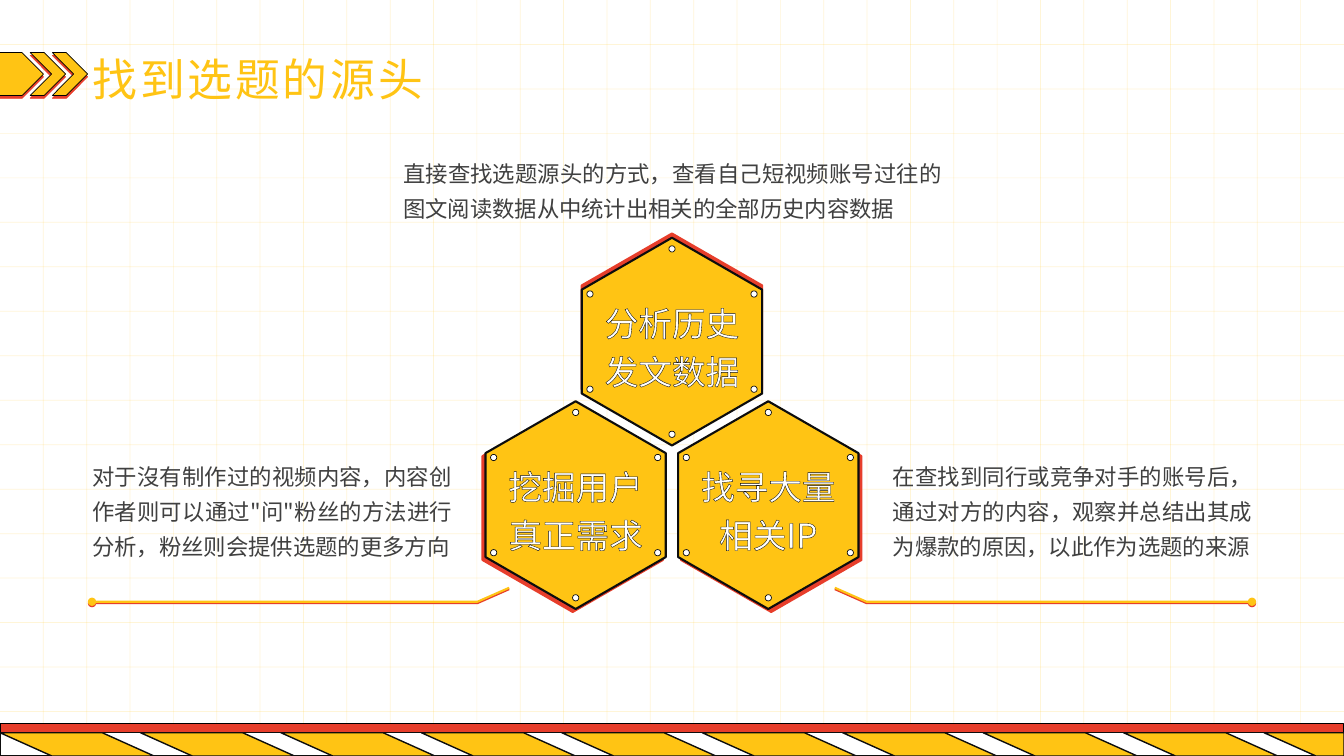
from dataclasses import dataclass
from typing import Any

from lxml import etree
from pptx import Presentation
from pptx import util as u
from pptx.dml.color import RGBColor
from pptx.enum import shapes, text
from pptx.oxml import ns

Pt = u.Pt
Point = tuple[float, float]
GOLD, RED, INK, WHITE, GREY = "FFC414", "E73E2B", "0D0D0D", "FFFFFF", "404040"
WIDE, HIGH = 960, 540
ALIGN = text.PP_ALIGN


@dataclass
class Style:
    fill: str | None
    line: str
    width: float
    drop: float = 0
    angle: int = 90


@dataclass
class Cell:
    x: float
    y: float
    angle: int
    lines: list[str]
    side: int = 0


@dataclass
class Note:
    x: float
    y: float
    width: float
    height: float
    words: str


def hue(code: str) -> RGBColor:
    return RGBColor.from_string(code)


def put(item: Any, values: dict[str, Any]) -> None:
    for name, value in values.items():
        setattr(item, name, value)


def add_tag(parent: Any, name: str, **values: Any) -> Any:
    node = etree.SubElement(parent, ns.qn(name))
    for key, value in values.items():
        node.set(key, str(value))
    return node


def paint(shape: Any, style: Style) -> None:
    if style.fill:
        shape.fill.solid()
        shape.fill.fore_color.rgb = hue(style.fill)
    else:
        shape.fill.background()
    shape.line.color.rgb = hue(style.line)
    shape.line.width = Pt(style.width)
    shape.shadow.inherit = False
    if style.drop:
        effects = shape.element.find(".//" + ns.qn("a:effectLst"))
        shade = add_tag(effects, "a:outerShdw", blurRad=0, dist=Pt(style.drop),
                        dir=style.angle * 60000, algn="ctr", rotWithShape=0)
        add_tag(shade, "a:srgbClr", val=RED)


def trace(pool: Any, loops: list[list[Point]], style: Style, close: bool = True) -> Any:
    paths = [[(Pt(x), Pt(y)) for x, y in loop] for loop in loops]
    pen = pool.build_freeform(*paths[0][0], scale=1.0)
    for path in paths:
        if path is not paths[0]:
            pen.move_to(*path[0])
        pen.add_line_segments(path[1:], close=close)
    shape = pen.convert_to_shape()
    paint(shape, style)
    return shape


def stamp(pool: Any, kind: Any, box: tuple[float, ...], style: Style) -> None:
    paint(pool.add_shape(kind, *map(Pt, box)), style)


def rule(pool: Any, start: Point, end: Point) -> None:
    line = pool.add_connector(shapes.MSO_CONNECTOR.STRAIGHT, *map(Pt, start + end))
    line.line.color.rgb = hue(GOLD)
    line.line.width = Pt(0.5)
    add_tag(line.element.find(".//" + ns.qn("a:srgbClr")), "a:alpha", val=17000)
    add_tag(line.element.spPr, "a:effectLst")


def write(shape: Any, lines: list[str], look: dict[str, Any], form: dict[str, Any],
          color: str, wrap: bool = True, edge: bool = False, space: int = 0) -> None:
    frame = shape.text_frame
    put(frame, {"margin_left": 0, "margin_right": 0, "margin_top": 0, "margin_bottom": 0,
                "word_wrap": wrap, "auto_size": text.MSO_AUTO_SIZE.NONE,
                "vertical_anchor": text.MSO_ANCHOR.TOP})
    frame.text = "\n".join(lines)
    for para in frame.paragraphs:
        put(para, form | {"space_before": Pt(0)})
        for run in para.runs:
            put(run.font, look)
            run.font.color.rgb = hue(color)
    for props in shape.element.iter(ns.qn("a:rPr")):
        add_tag(props, "a:ea", typeface=look["name"])
        if space:
            props.set("spc", str(space))
        if edge:
            line = add_tag(props, "a:ln", w=Pt(0.5))
            add_tag(add_tag(line, "a:solidFill"), "a:srgbClr", val=INK)
            props.insert(0, line)


def draw_grid(pool: Any) -> None:
    rows, cols = 17, 31
    grid = pool.add_group_shape().shapes
    for row in range(1, rows):
        y = HIGH * row / rows
        rule(grid, (0, y), (WIDE, y))
    for col in range(1, cols):
        x = WIDE * col / cols
        rule(grid, (x, 0), (x, HIGH))


def draw_frame(pool: Any) -> None:
    rect = shapes.MSO_SHAPE.RECTANGLE
    top, mid, low = 37.6, 52.9, 68.2
    badge = Style(GOLD, "000000", 0.5, 2)
    stamp(pool, rect, (0, 517, WIDE, 18), Style(RED, "000000", 0))
    trace(pool, [[(-0.7, top), (15.8, top), (31.1, mid), (15.8, low), (-0.7, low)]], badge)
    for x in (21.6, 37.4):
        trace(pool, [[(x + 25.2, mid), (x + 10, low), (x, low), (x + 15.2, mid),
                      (x, top), (x + 10, top)]], badge)
    roof = 523.4
    band = pool.add_group_shape().shapes
    stamp(band, rect, (0, roof, WIDE, HIGH - roof), Style(WHITE, INK, 1))
    loops = [[(min(WIDE, 100.32 * i + dx), y) for dx, y in
              ((0, roof), (37, HIGH), (110, HIGH), (73, roof))] for i in range(10)]
    trace(band, loops, Style(GOLD, INK, 1))


def draw_cell(pool: Any, cell: Cell) -> None:
    group = pool.add_group_shape().shapes
    ring = [(0, 74.2), (-64.4, 37.1), (-64.4, -37.1), (0, -74.2), (64.4, -37.1), (64.4, 37.1)]
    trace(group, [[(cell.x + dx, cell.y + dy) for dx, dy in ring]],
          Style(GOLD, INK, 1.5, 3, cell.angle))
    size = 4.5
    for dx, dy in ((0, -66.2), (0, 66.2), (58.6, 34), (58.6, -34), (-58.6, 34), (-58.6, -34)):
        stamp(group, shapes.MSO_SHAPE.OVAL,
              (cell.x + dx - size / 2, cell.y + dy - size / 2, size, size),
              Style(WHITE, INK, 0.5))
    if cell.side:
        bend = [(WIDE / 2 + cell.side * dx, y)
                for dx, y in ((116.3, 419.8), (139, 429.8), (414.3, 429.8))]
        lead = trace(group, [bend], Style(None, GOLD, 1.5, 1), close=False)
        add_tag(lead.element.find(".//" + ns.qn("a:ln")), "a:tailEnd", type="oval")


def label(pool: Any, cell: Cell) -> None:
    box = pool.add_textbox(Pt(cell.x - 57), Pt(cell.y - 33.5), Pt(114), Pt(70))
    write(box, cell.lines, {"size": Pt(24), "name": "Noto Sans CJK JP"},
          {"alignment": ALIGN.CENTER, "line_spacing": Pt(34.5)}, WHITE, edge=True)


def main() -> None:
    deck = Presentation()
    put(deck, {"slide_width": Pt(WIDE), "slide_height": Pt(HIGH)})
    slide = deck.slides.add_slide(deck.slide_layouts[5])
    pool = slide.shapes
    cells = [Cell(548.8, 360.8, 45, ["找寻大量相关IP"], 1),
             Cell(411.2, 360.8, 135, ["挖掘用户真正需求"], -1),
             Cell(480, 244, 270, ["分析历史", "发文数据"])]
    notes = [
        Note(288, 108.3, 385, 50,
             "直接查找选题源头的方式，查看自己短视频账号过往的图文阅读数据从中统计出相关的全部历史内容数据"),
        Note(66, 325, 257, 100,
             "对于沒有制作过的视频内容，内容创作者则可以通过\"问\"粉丝的方法进行分析，粉丝则会提供选题的更多方向"),
        Note(637.7, 325, 257, 75,
             "在查找到同行或竞争对手的账号后，通过对方的内容，观察并总结出其成为爆款的原因，以此作为选题的来源")]
    draw_grid(pool)
    draw_frame(pool)
    for cell in cells:
        draw_cell(pool, cell)
    for cell in cells:
        label(pool, cell)
    title = pool.title
    put(title, {"left": Pt(66), "top": Pt(39), "width": Pt(240.5), "height": Pt(36)})
    write(title, ["找到选题的源头"], {"size": Pt(32), "name": "Noto Sans CJK JP"},
          {"alignment": ALIGN.LEFT, "line_spacing": Pt(36)}, GOLD, wrap=False, space=200)
    for note in notes:
        box = pool.add_textbox(Pt(note.x), Pt(note.y), Pt(note.width), Pt(note.height))
        write(box, [note.words], {"size": Pt(16), "name": "Noto Sans CJK SC"},
              {"alignment": ALIGN.JUSTIFY, "line_spacing": Pt(25)}, GREY)
    deck.save("out.pptx")


if __name__ == "__main__":
    main()
